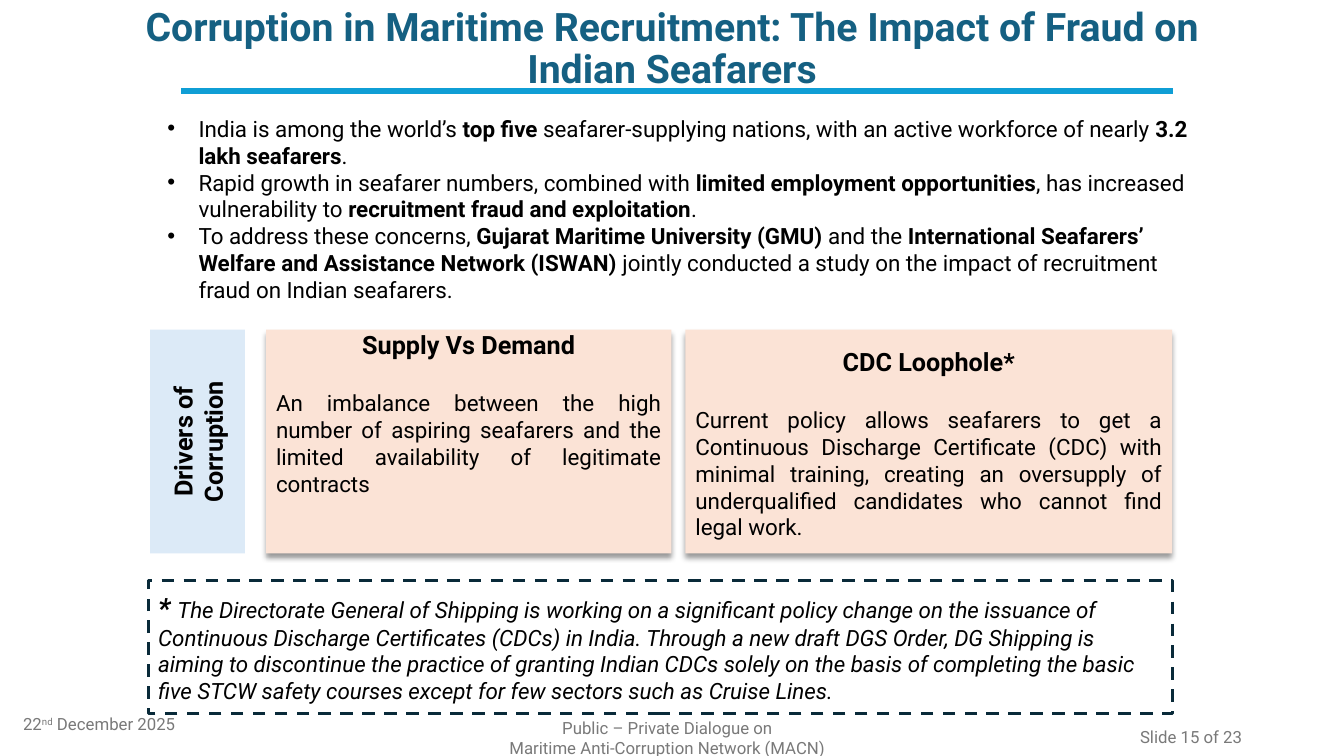
from dataclasses import dataclass

from lxml import etree
from pptx import Presentation
from pptx.dml.color import RGBColor
from pptx.enum.dml import MSO_LINE
from pptx.enum.shapes import MSO_CONNECTOR, MSO_SHAPE
from pptx.enum.text import MSO_ANCHOR, MSO_AUTO_SIZE, PP_ALIGN
from pptx.oxml.ns import qn
from pptx.util import Inches, Pt

LEFT, CENTER, RIGHT, JUSTIFY = PP_ALIGN.LEFT, PP_ALIGN.CENTER, PP_ALIGN.RIGHT, PP_ALIGN.JUSTIFY
TOP, MIDDLE = MSO_ANCHOR.TOP, MSO_ANCHOR.MIDDLE
FIXED_SIZE = MSO_AUTO_SIZE.NONE
RECTANGLE, SNIPPED = MSO_SHAPE.RECTANGLE, MSO_SHAPE.SNIP_1_RECTANGLE
STRAIGHT, DASHED = MSO_CONNECTOR.STRAIGHT, MSO_LINE.DASH

SLIDE_WIDTH, SLIDE_HEIGHT = Inches(13.33), Inches(7.5)
TYPEFACE = "Roboto"
BLACK, GREY, TITLE_BLUE, RULE_BLUE = "000000", "797979", "156082", "0F9ED5"
PEACH, PALE_BLUE, NAVY = "FBE3D6", "DCEAF7", "092A39"
BULLET_INDENT = Inches(0.31)
CARD_TOP, CARD_HEIGHT, CARD_GAP = 43.6, 29.6, 21


@dataclass(frozen=True)
class Area:
    """Left, top, width and height in percent of the slide."""
    left: float
    top: float
    width: float
    height: float

    def emu(self) -> tuple[int, int, int, int]:
        return (across(self.left), down(self.top), across(self.width), down(self.height))


@dataclass(frozen=True)
class Words:
    text: str
    bold: bool = False
    italic: bool = False
    size: int = 16
    color: str = BLACK
    raised: bool = False


@dataclass(frozen=True)
class Line:
    words: tuple[Words, ...]
    align: PP_ALIGN = LEFT
    before: float = 0
    spacing: float = 1.0
    bullet: bool = False


@dataclass(frozen=True)
class Card:
    heading: str
    detail: str
    left: float
    width: float
    inset: float


@dataclass(frozen=True)
class FooterItem:
    area: Area
    lines: tuple[Line, ...]


def across(share: float) -> int:
    return round(SLIDE_WIDTH * share / 100)


def down(share: float) -> int:
    return round(SLIDE_HEIGHT * share / 100)


def rgb(value: str) -> RGBColor:
    return RGBColor.from_string(value)


def small(text: str, raised: bool = False) -> Words:
    return Words(text, size=12, color=GREY, raised=raised)


def strong(text: str) -> Words:
    return Words(text, bold=True)


def heading_line(text: str) -> Line:
    return Line((Words(text, bold=True, size=18),), CENTER)


def write(frame, lines: tuple[Line, ...], anchor: MSO_ANCHOR = MIDDLE) -> None:
    frame.word_wrap = True
    frame.auto_size = FIXED_SIZE
    frame.vertical_anchor = anchor
    for position, line in enumerate(lines):
        paragraph = frame.add_paragraph() if position else frame.paragraphs[0]
        if line.bullet:
            properties = paragraph._p.get_or_add_pPr()
            properties.set("marL", str(BULLET_INDENT))
            properties.set("indent", str(-BULLET_INDENT))
            etree.SubElement(properties, qn("a:buFont")).set("typeface", "Arial")
            etree.SubElement(properties, qn("a:buChar")).set("char", "•")
        paragraph.alignment = line.align
        paragraph.line_spacing = line.spacing
        paragraph.space_before = Pt(line.before)
        for words in line.words:
            run = paragraph.add_run()
            run.text = words.text
            font = run.font
            font.name, font.size = TYPEFACE, Pt(words.size)
            font.bold, font.italic = words.bold, words.italic
            font.color.rgb = rgb(words.color)
            if words.raised:
                run._r.get_or_add_rPr().set("baseline", "30000")


def add_panel(slide, kind: MSO_SHAPE, area: Area, fill: str | None = None):
    panel = slide.shapes.add_shape(kind, *area.emu())
    panel.shadow.inherit = False
    panel.line.fill.background()
    if fill:
        panel.fill.solid()
        panel.fill.fore_color.rgb = rgb(fill)
    else:
        panel.fill.background()
    return panel


def drop_shadow(panel) -> None:
    effects = panel._element.spPr.find(qn("a:effectLst"))
    shadow = etree.SubElement(effects, qn("a:outerShdw"), blurRad=str(Pt(4)),
                              dist=str(Pt(3)), dir="5400000", algn="t", rotWithShape="0")
    tint = etree.SubElement(shadow, qn("a:srgbClr"), val=BLACK)
    etree.SubElement(tint, qn("a:alpha"), val="40000")


def add_card(slide, card: Card) -> None:
    panel = add_panel(slide, SNIPPED, Area(card.left, CARD_TOP, card.width, CARD_HEIGHT), PEACH)
    panel.adjustments[0] = 0
    drop_shadow(panel)
    panel.text_frame.margin_top = Pt(card.inset)
    detail = Line((Words(card.detail),), JUSTIFY, before=CARD_GAP)
    write(panel.text_frame, (heading_line(card.heading), detail), TOP)


def add_rule(slide, start: float, end: float, height: float) -> None:
    rule = slide.shapes.add_connector(STRAIGHT, across(start), down(height), across(end), down(height))
    rule.line.color.rgb = rgb(RULE_BLUE)
    rule.line.width = Pt(4.5)
    etree.SubElement(rule._element.spPr, qn("a:effectLst"))


def fill_placeholder(holder, area: Area, lines: tuple[Line, ...], anchor: MSO_ANCHOR) -> None:
    holder.left, holder.top, holder.width, holder.height = area.emu()
    write(holder.text_frame, lines, anchor)


TITLE = Line((Words("Corruption in Maritime Recruitment: The Impact of Fraud on Indian Seafarers",
                    bold=True, size=28, color=TITLE_BLUE),), CENTER, spacing=0.9)
FINDINGS = (
    (Words("India is among the world’s "), strong("top five "),
     Words("seafarer-supplying nations, with an active workforce of nearly "),
     strong("3.2 lakh seafarers"), Words(".")),
    (Words("Rapid growth in seafarer numbers, combined with "),
     strong("limited employment opportunities"), Words(", has increased vulnerability to "),
     strong("recruitment fraud and exploitation"), Words(".")),
    (Words("To address these concerns, "), strong("Gujarat Maritime University (GMU) "),
     Words("and the "), strong("International Seafarers’ Welfare and Assistance Network (ISWAN)"),
     Words(" jointly conducted a study on the impact of recruitment fraud on Indian seafarers.")),
)
CARDS = (
    Card("Supply Vs Demand", "An imbalance between the high number of aspiring seafarers and the "
         "limited availability of legitimate contracts", 19.8, 30.15, 0),
    Card("CDC Loophole*", "Current policy allows seafarers to get a Continuous Discharge Certificate "
         "(CDC) with minimal training, creating an oversupply of underqualified candidates who "
         "cannot find legal work.", 51, 36.2, 12),
)
POLICY_NOTE = Line((
    Words("* ", bold=True, italic=True, size=20),
    Words("The Directorate General of Shipping is working on a significant policy change on the "
          "issuance of Continuous Discharge Certificates (CDCs) in India. Through a new draft DGS "
          "Order, DG Shipping is aiming to discontinue the practice of granting Indian CDCs solely "
          "on the basis of completing the basic five STCW safety courses except for few sectors "
          "such as Cruise Lines.", italic=True)))
FOOTER = (
    FooterItem(Area(0.98, 93.07, 22.5, 5.33),
               (Line((small("22"), small("nd", raised=True), small(" December 2025"))),)),
    FooterItem(Area(70.67, 94.8, 22.5, 5.33), (Line((small("Slide 15 of 23"),), RIGHT),)),
    FooterItem(Area(32.78, 94.93, 33.75, 5.33),
               (Line((small("Public – Private Dialogue on"),), CENTER),
                Line((small("Maritime Anti-Corruption Network (MACN)"),), CENTER))),
)


def main() -> None:
    deck = Presentation()
    deck.slide_width, deck.slide_height = SLIDE_WIDTH, SLIDE_HEIGHT
    slide = deck.slides.add_slide(deck.slide_layouts[1])
    fill_placeholder(slide.shapes.title, Area(10, 1.2, 80, 10.8), (TITLE,), MIDDLE)
    findings = tuple(Line(words, bullet=True) for words in FINDINGS)
    fill_placeholder(slide.placeholders[1], Area(11.7, 14.53, 78.4, 26.53), findings, TOP)
    add_rule(slide, 13.5, 87.25, 12)
    for card in CARDS:
        add_card(slide, card)
    drivers = add_panel(slide, RECTANGLE, Area(6.38, 52.13, 16.65, 12.53), PALE_BLUE)
    drivers.rotation = 270
    write(drivers.text_frame, (heading_line("Drivers of Corruption"),))
    policy = add_panel(slide, RECTANGLE, Area(11.03, 76.8, 76.2, 17.6))
    policy.line.color.rgb = rgb(NAVY)
    policy.line.width = Pt(2.25)
    policy.line.dash_style = DASHED
    write(policy.text_frame, (POLICY_NOTE,))
    for item in FOOTER:
        write(slide.shapes.add_textbox(*item.area.emu()).text_frame, item.lines)
    deck.save("out.pptx")


if __name__ == "__main__":
    main()
